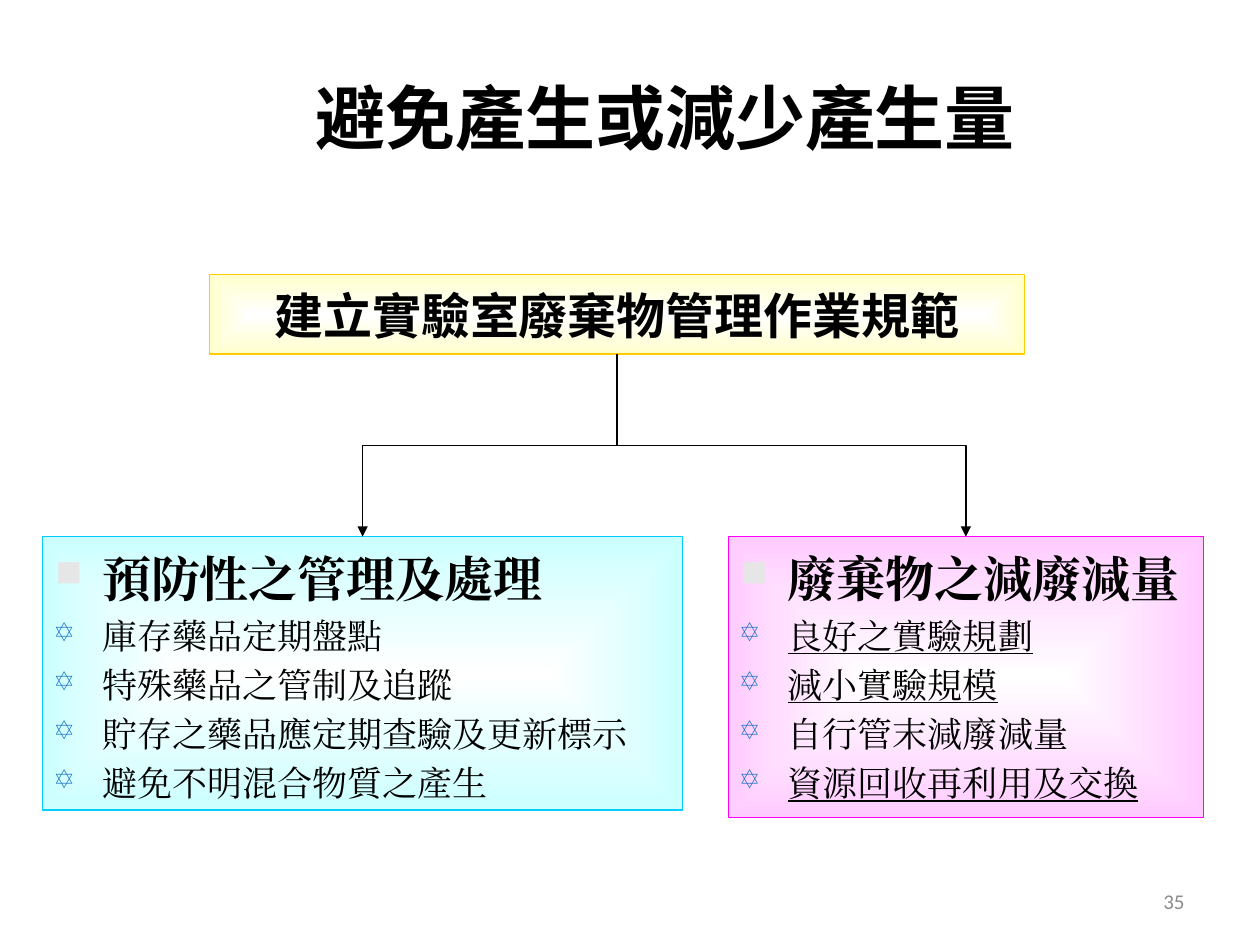
from lxml.etree import SubElement
from pptx import Presentation
from pptx.dml.color import RGBColor
from pptx.enum.shapes import MSO_CONNECTOR, MSO_SHAPE
from pptx.enum.text import MSO_ANCHOR, PP_ALIGN
from pptx.oxml.ns import qn
from pptx.util import Cm, Pt

BLACK = RGBColor(0x00, 0x00, 0x00)
WHITE = RGBColor(0xFF, 0xFF, 0xFF)
GREY = RGBColor(0x8C, 0x8C, 0x8C)
PALE = RGBColor(0xE7, 0xE6, 0xE6)
BLUE = RGBColor(0x05, 0x63, 0xC1)
CREAM = RGBColor(0xFF, 0xFF, 0xCC)
GOLD = RGBColor(0xFF, 0xCC, 0x00)
PINK = RGBColor(0xFF, 0xCC, 0xFF)
MAGENTA = RGBColor(0xFF, 0x00, 0xFF)
AQUA = RGBColor(0xCC, 0xFF, 0xFF)
CYAN = RGBColor(0x00, 0xCC, 0xFF)

SANS = "Noto Sans CJK SC"
SERIF = "Times New Roman"
INDENT = Cm(0.95)

# Boxes as left, top, width, height in cm
TITLE = (2.69, 0.76, 21.44, 3.18)
BANNER = (4.22, 5.54, 16.43, 1.6)
LEFT = (0.86, 10.82, 12.9, 5.51)
RIGHT = (14.68, 10.82, 9.58, 5.66)
NUMBER = (18.21, 17.65, 5.92, 1.02)

# Each item: text, underlined
CARE = [("庫存藥品定期盤點", False), ("特殊藥品之管制及追蹤", False),
        ("貯存之藥品應定期查驗及更新標示", False),
        ("避免不明混合物質之產生", False)]
REDUCE = [("良好之實驗規劃", True), ("減小實驗規模", True),
          ("自行管末減廢減量", False), ("資源回收再利用及交換", True)]


def style(para, face, size, color=BLACK, bold=False, under=False):
    for run in para.runs:
        font = run.font
        font.name, font.size, font.bold = face, Pt(size), bold
        font.underline = under
        font.color.rgb = color
        SubElement(font._element, qn("a:ea"), typeface=face)


def bullet(para, mark, color):
    props = para._p.get_or_add_pPr()
    props.set("marL", str(INDENT))
    props.set("indent", str(-INDENT))
    tint = SubElement(props, qn("a:buClr"))
    SubElement(tint, qn("a:srgbClr"), val=str(color))
    SubElement(props, qn("a:buSzPct"), val="75000")
    SubElement(props, qn("a:buChar"), char=mark)


def glow(shape, edge):
    """Fill from a white centre to a tinted edge."""
    shape.fill.gradient()
    grad = shape.element.spPr.find(qn("a:gradFill"))
    for child in list(grad):
        grad.remove(child)
    stops = SubElement(grad, qn("a:gsLst"))
    for pos, color in ((0, WHITE), (100000, edge)):
        stop = SubElement(stops, qn("a:gs"), pos=str(pos))
        SubElement(stop, qn("a:srgbClr"), val=str(color))
    route = SubElement(grad, qn("a:path"), path="shape")
    SubElement(route, qn("a:fillToRect"),
               **dict.fromkeys("ltrb", "50000"))


def panel(slide, box, edge, line):
    shape = slide.shapes.add_shape(MSO_SHAPE.RECTANGLE, *map(Cm, box))
    shape.shadow.inherit = False
    glow(shape, edge)
    shape.line.color.rgb = line
    shape.line.width = Pt(0.75)
    shape.text_frame.word_wrap = True
    return shape


def add_title(slide, box, text):
    title = slide.shapes.title
    title.left, title.top, title.width, title.height = map(Cm, box)
    frame = title.text_frame
    frame.text = text
    frame.vertical_anchor = MSO_ANCHOR.MIDDLE
    para = frame.paragraphs[0]
    para.alignment = PP_ALIGN.CENTER
    style(para, SANS, 40, bold=True)


def add_banner(slide, box, text):
    frame = panel(slide, box, CREAM, GOLD).text_frame
    frame.text = text
    frame.vertical_anchor = MSO_ANCHOR.MIDDLE
    para = frame.paragraphs[0]
    para.alignment = PP_ALIGN.CENTER
    style(para, SANS, 28, bold=True)


def add_list(slide, box, edge, line, head, items):
    frame = panel(slide, box, edge, line).text_frame
    frame.vertical_anchor = MSO_ANCHOR.TOP
    para = frame.paragraphs[0]
    para.text = head
    para.alignment = PP_ALIGN.LEFT
    para.line_spacing = Pt(37)
    bullet(para, "■", PALE)
    style(para, SERIF, 28, bold=True)
    for text, under in items:
        para = frame.add_paragraph()
        para.text = text
        para.alignment = PP_ALIGN.LEFT
        para.line_spacing = Pt(24)
        para.space_before = Pt(4)
        bullet(para, "✡", BLUE)
        style(para, SERIF, 20, under=under)


def add_arrow(slide, start, end, width):
    """Elbow from the foot of one box to the head of another."""
    x1, y1 = start[0] + start[2] / 2, start[1] + start[3]
    x2, y2 = end[0] + end[2] / 2, end[1]
    # The elbow runs sideways first, so lay it flat and turn it upright
    midx, midy = (x1 + x2) / 2, (y1 + y2) / 2
    side = 1 if x2 > x1 else -1
    dx, dy = (y2 - y1) / 2 * side, abs(x2 - x1) / 2
    link = slide.shapes.add_connector(
        MSO_CONNECTOR.ELBOW, Cm(midx + dx), Cm(midy - dy),
        Cm(midx - dx), Cm(midy + dy))
    props = link.element.spPr
    props.find(qn("a:xfrm")).set("rot", str((180 + 90 * side) * 60000))
    link.line.color.rgb = BLACK
    link.line.width = Pt(width)
    SubElement(props.find(qn("a:ln")), qn("a:tailEnd"), type="triangle")
    SubElement(props, qn("a:effectLst"))


def add_number(slide, box, text):
    frame = slide.shapes.add_textbox(*map(Cm, box)).text_frame
    frame.word_wrap = True
    frame.vertical_anchor = MSO_ANCHOR.MIDDLE
    frame.text = text
    para = frame.paragraphs[0]
    para.alignment = PP_ALIGN.RIGHT
    style(para, "Calibri", 12, GREY)


def main():
    deck = Presentation()
    deck.slide_width, deck.slide_height = Cm(25.4), Cm(19.05)
    slide = deck.slides.add_slide(deck.slide_layouts[5])
    add_title(slide, TITLE, "避免產生或減少產生量")
    add_banner(slide, BANNER, "建立實驗室廢棄物管理作業規範")
    add_list(slide, RIGHT, PINK, MAGENTA, "廢棄物之減廢減量", REDUCE)
    add_list(slide, LEFT, AQUA, CYAN, "預防性之管理及處理", CARE)
    add_arrow(slide, BANNER, RIGHT, 0.75)
    add_arrow(slide, BANNER, LEFT, 1)
    add_number(slide, NUMBER, "35")
    deck.save("out.pptx")


if __name__ == "__main__":
    main()
